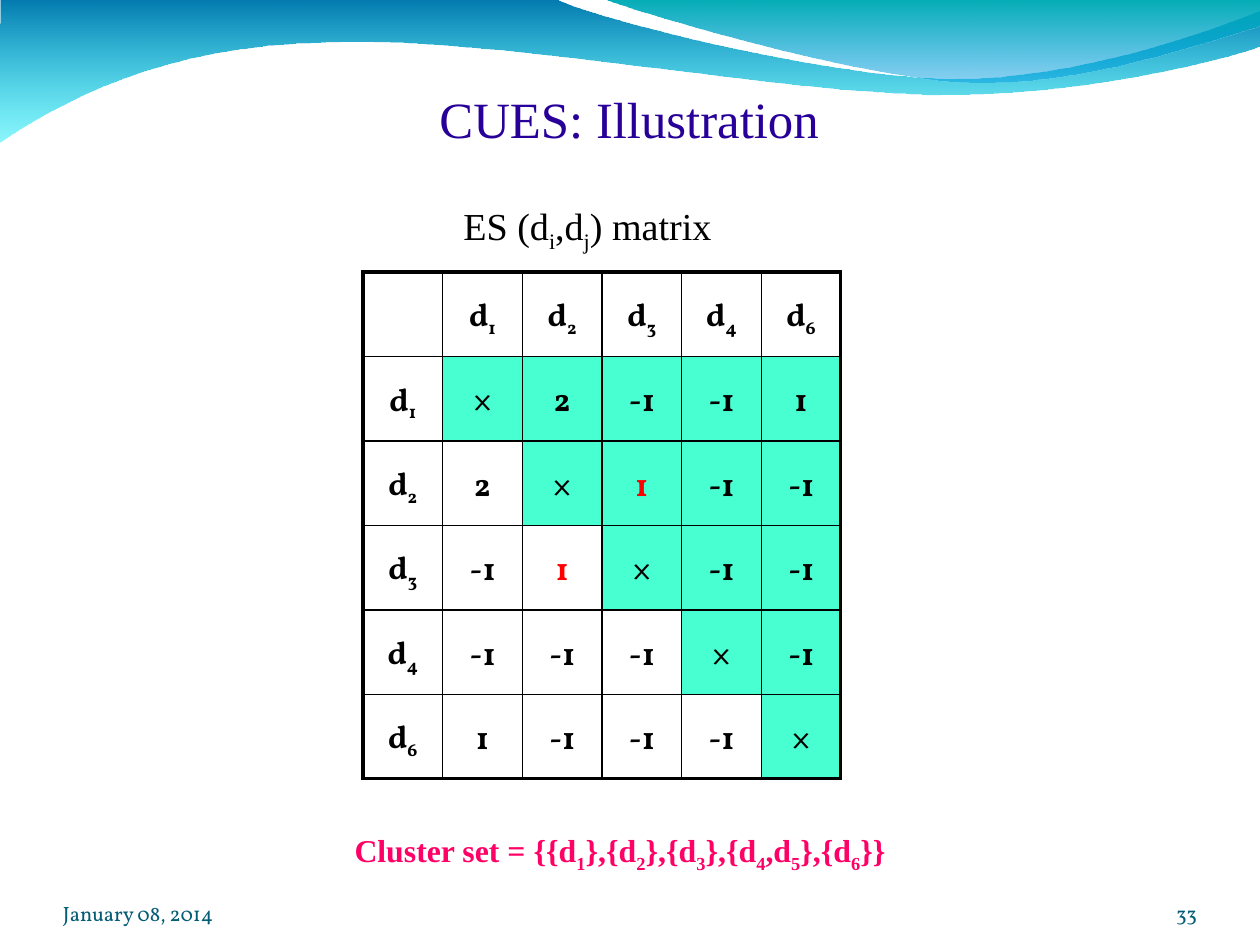
"""Build the CUES illustration slide with its ES matrix."""
from dataclasses import dataclass

from lxml.etree import SubElement
from pptx import Presentation
from pptx.dml.color import RGBColor as Rgb
from pptx.enum.text import MSO_ANCHOR as Anchor, PP_ALIGN as Align
from pptx.oxml.ns import qn
from pptx.util import Pt

EMU_PER_PX = 8000


@dataclass(frozen=True)
class Theme:
    """Colours, fonts and type sizes of the slide."""
    ink: str = "000000"
    title: str = "280099"
    cluster: str = "FF0066"
    footer: str = "045C75"
    highlight: str = "FF0000"
    shade: str = "47FFD1"
    back_wave: tuple = ("0079AF", "00EBF8")
    front_wave: tuple = ("00ADB6", "009BE5")
    wave_alpha: int = 45
    serif: str = "Times New Roman"
    body: str = "Vollkorn"
    title_size: int = 32
    caption_size: int = 24
    matrix_size: int = 20
    footer_size: int = 13
    frame_width: float = 2.25
    grid_width: float = 1


THEME = Theme()

BACK_WAVE = ((0, 0), [
    [(554, -1)],
    [(599, 21), (837, 79), (955, 79)],
    [(1076, 79), (1208, 32), (1260, 11)],
    [(1262, 46)],
    [(1239, 55), (1096, 96), (940, 95)],
    [(784, 95), (481, 35), (325, 43)],
    [(162, 45), (57, 104), (-1, 143)],
])
FRONT_WAVE = ((603, -1), [
    [(642, 14), (860, 78), (969, 82)],
    [(1078, 87), (1212, 40), (1260, 26)],
    [(1260, 0)],
])

DOCUMENTS = ["d_1", "d_2", "d_3", "d_4", "d_6"]
SIMILARITIES = [
    ["×", "2", "-1", "-1", "1"],
    ["2", "×", "1", "-1", "-1"],
    ["-1", "1", "×", "-1", "-1"],
    ["-1", "-1", "-1", "×", "-1"],
    ["1", "-1", "-1", "-1", "×"],
]
MERGED_PAIR = {"d_2", "d_3"}


def px(length):
    """Turn a length in px into EMU."""
    return length * EMU_PER_PX


def write(frame, text, *, size, color=THEME.ink, font=THEME.serif, bold=False,
          align=Align.CENTER, line_spacing=None, space_after=None):
    """Write one paragraph; an underscore makes the next character a subscript."""
    paragraph = frame.paragraphs[0]
    paragraph.alignment = align
    paragraph.line_spacing = line_spacing
    paragraph.space_after = space_after
    first, *marked = text.split("_")
    pieces = [(first, False)]
    for part in marked:
        pieces += [(part[0], True), (part[1:], False)]
    for piece, lowered in pieces:
        if not piece:
            continue
        run = paragraph.add_run()
        run.text = piece
        run.font.name = font
        run.font.size = Pt(size)
        run.font.bold = bold
        run.font.color.rgb = Rgb.from_string(color)
        if lowered:
            run.font._element.set("baseline", "-25000")


def set_margins(target, insets):
    """Set left, top, right and bottom margins of a frame or cell."""
    (target.margin_left, target.margin_top,
     target.margin_right, target.margin_bottom) = map(px, insets)


def add_label(slide, box, text, *, insets=(0, 0, 0, 0), anchor=Anchor.TOP, **style):
    """Add a wrapped text box."""
    frame = slide.shapes.add_textbox(*map(px, box)).text_frame
    frame.word_wrap = True
    frame.vertical_anchor = anchor
    set_margins(frame, insets)
    write(frame, text, **style)


def bend(wave, segments):
    """Join each three-point segment of the outline into one cubic curve."""
    lines = iter(wave._element.findall(".//" + qn("a:lnTo")))
    for segment in segments:
        head, *others = [next(lines) for _ in segment]
        if others:
            head.tag = qn("a:cubicBezTo")
        for line in others:
            head.append(line[0])
            line.getparent().remove(line)


def add_wave(slide, outline, colors):
    """Add a wave that fades downwards."""
    start, segments = outline
    builder = slide.shapes.build_freeform(*start, scale=EMU_PER_PX)
    builder.add_line_segments([point for segment in segments for point in segment])
    wave = builder.convert_to_shape()
    bend(wave, segments)
    wave.shadow.inherit = False
    wave.line.fill.background()
    wave.fill.gradient()
    wave.fill.gradient_angle = 270
    for stop, color in zip(wave.fill.gradient_stops, colors):
        stop.color.rgb = Rgb.from_string(color)
    faded = wave._element.findall(".//" + qn("a:srgbClr"))[-1]
    SubElement(faded, qn("a:alpha"), val=str(THEME.wave_alpha * 1000))


def set_borders(cell, widths):
    """Draw the left, right, top and bottom borders of a cell."""
    properties = cell._tc.get_or_add_tcPr()
    for side, width in zip("LRTB", widths):
        line = SubElement(properties, qn(f"a:ln{side}"), w=str(Pt(width)))
        fill = SubElement(line, qn("a:solidFill"))
        SubElement(fill, qn("a:srgbClr"), val=THEME.ink)


def add_matrix(slide, box, names, values):
    """Add the similarity matrix with its upper triangle shaded."""
    grid = [["", *names]] + [[name, *row] for name, row in zip(names, values)]
    last = len(names)
    matrix = slide.shapes.add_table(last + 1, last + 1, *map(px, box)).table
    matrix.first_row = matrix.horz_banding = False
    for r, row in enumerate(grid):
        for c, text in enumerate(row):
            cell = matrix.cell(r, c)
            on_frame = (c == 0, c == last, r == 0, r == last)
            set_borders(cell, [THEME.frame_width if edge else THEME.grid_width
                               for edge in on_frame])
            if 1 <= r <= c:
                cell.fill.solid()
                cell.fill.fore_color.rgb = Rgb.from_string(THEME.shade)
            else:
                cell.fill.background()
            cell.vertical_anchor = Anchor.MIDDLE
            set_margins(cell, (11, 10, 11, 6))
            merged = {grid[r][0], grid[0][c]} == MERGED_PAIR
            write(cell.text_frame, text, size=THEME.matrix_size, font=THEME.body, bold=True,
                  color=THEME.highlight if merged else THEME.ink,
                  line_spacing=0.86, space_after=Pt(14.2))


def main():
    """Build and save the slide."""
    deck = Presentation()
    deck.slide_width, deck.slide_height = px(1260), px(945)
    slide = deck.slides.add_slide(deck.slide_layouts[6])
    add_wave(slide, BACK_WAVE, THEME.back_wave)
    add_wave(slide, FRONT_WAVE, THEME.front_wave)
    add_label(slide, (63, 72, 1133, 77), "CUES: Illustration", insets=(0, 7, 0, 0),
              anchor=Anchor.BOTTOM, size=THEME.title_size, color=THEME.title)
    add_matrix(slide, (363, 272, 478, 507), DOCUMENTS, SIMILARITIES)
    add_label(slide, (69, 196, 1134, 58), "ES (d_i,d_j) matrix",
              insets=(11, 6, 108, 6), size=THEME.caption_size)
    add_label(slide, (134, 825, 972, 50),
              "Cluster set = {{d_1},{d_2},{d_3},{d_4,d_5},{d_6}}", insets=(11, 6, 11, 6),
              size=THEME.matrix_size, color=THEME.cluster, bold=True)
    footer = dict(anchor=Anchor.BOTTOM, size=THEME.footer_size,
                  color=THEME.footer, font=THEME.body)
    add_label(slide, (1092, 876, 105, 50), "33", align=Align.RIGHT, **footer)
    add_label(slide, (63, 876, 294, 50), "January 08, 2014", align=Align.LEFT, **footer)
    deck.save("out.pptx")


if __name__ == "__main__":
    main()
